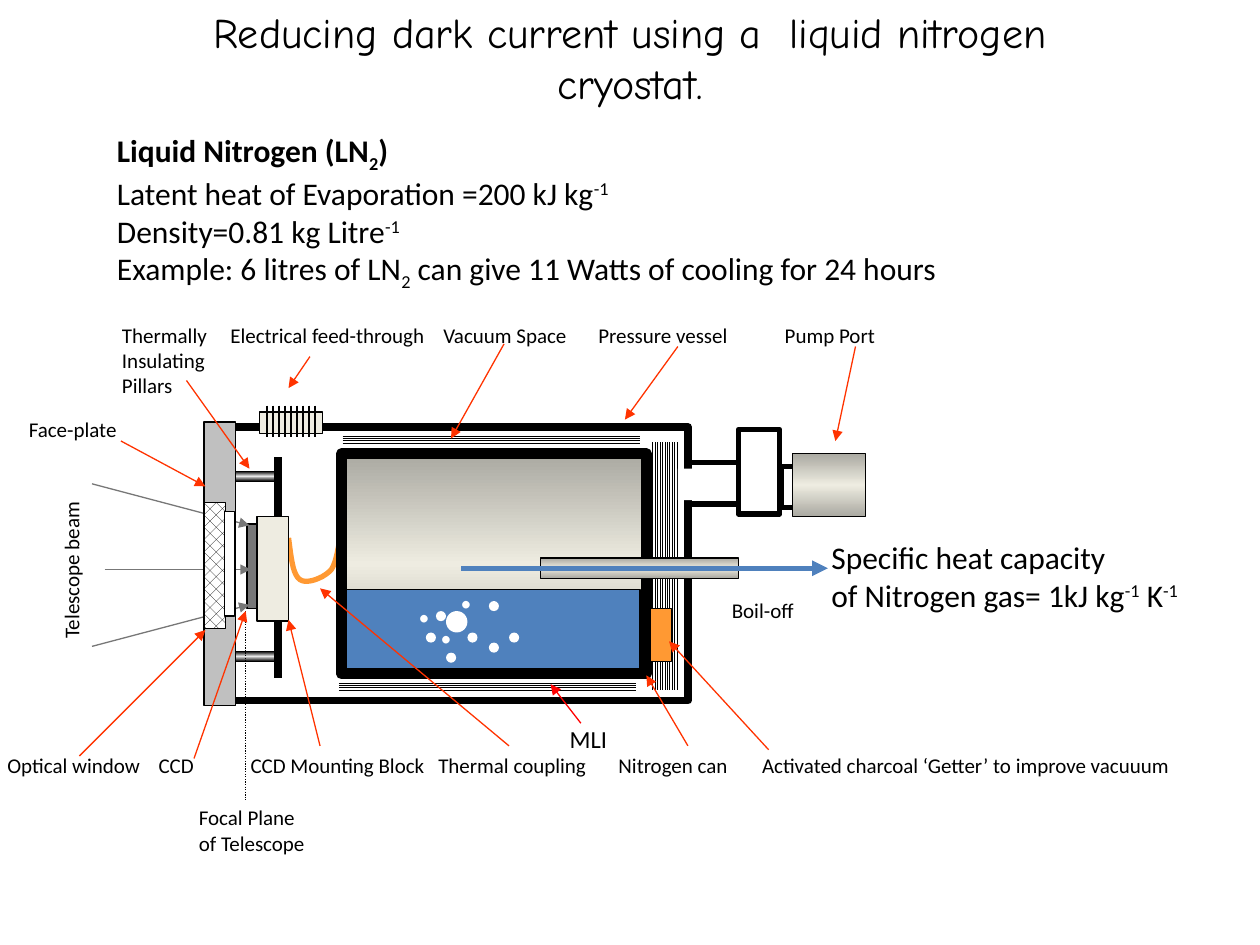
import copy

import pptx
import pptx.dml.color
import pptx.enum.dml
import pptx.enum.shapes
import pptx.enum.text
import pptx.oxml.ns
import pptx.oxml.xmlchemy
import pptx.util
from lxml import etree

rgb = pptx.dml.color.RGBColor.from_string
qn = pptx.oxml.ns.qn
Pt = pptx.util.Pt
RECTANGLE = pptx.enum.shapes.MSO_SHAPE.RECTANGLE
OVAL = pptx.enum.shapes.MSO_SHAPE.OVAL
PATTERN = pptx.enum.dml.MSO_PATTERN
BLACK, WHITE, GREY, CREAM = "000000", "FFFFFF", "777777", "EEECE1"
BLUE, ORANGE, POINTER = "4F81BD", "FF9933", "FF3300"
STEEL = ("AAA9A1", CREAM)
ROD = (BLACK, "E8E8E8")

deck = pptx.Presentation()
deck.slide_width = pptx.util.Inches(10)
deck.slide_height = pptx.util.Inches(7.5)
page = deck.slides.add_slide(deck.slide_layouts[6])

# The page is a grid of 100 columns and 75 rows; all places are in its cells.
column = deck.slide_width / 100
row = deck.slide_height / 75


def draw_block(left, top, width, height, fill, edge=0.75, kind=RECTANGLE, turn=0):
    """Fill: hex for solid, pair of hex for edge-middle-edge, pattern, or None."""
    block = page.shapes.add_shape(kind, int(left * column), int(top * row),
                                  int(width * column), int(height * row))
    block.shadow.inherit = False
    block.rotation = turn
    if fill is None:
        block.fill.background()
    elif isinstance(fill, str):
        block.fill.solid()
        block.fill.fore_color.rgb = rgb(fill)
    elif isinstance(fill, tuple):
        block.fill.gradient()
        block.fill.gradient_angle = 270
        first, second = block.fill.gradient_stops
        first.color.rgb, second.color.rgb = rgb(fill[0]), rgb(fill[1])
        first.position, second.position = 0, 0.5
        stops = block.element.spPr.find(".//" + qn("a:gsLst"))
        last = copy.deepcopy(stops[0])
        last.set("pos", "100000")
        stops.append(last)
    else:
        block.fill.patterned()
        block.fill.pattern = fill
        block.fill.fore_color.rgb = rgb(BLACK)
        block.fill.back_color.rgb = rgb(WHITE)
    if edge:
        block.line.color.rgb = rgb(BLACK)
        block.line.width = Pt(edge)
    else:
        block.line.fill.background()


def draw_line(x1, y1, x2, y2, color, width=0.75, arrow=True, dash=None):
    line = page.shapes.add_connector(
        pptx.enum.shapes.MSO_CONNECTOR.STRAIGHT,
        int(x1 * column), int(y1 * row), int(x2 * column), int(y2 * row))
    line.line.color.rgb = rgb(color)
    line.line.width = Pt(width)
    if dash:
        line.line.dash_style = dash
    properties = line._element.spPr
    if arrow:
        etree.SubElement(properties.find(qn("a:ln")), qn("a:tailEnd"), type="triangle")
    etree.SubElement(properties, qn("a:effectLst"))


# Insulation at the back, pillars, thermal coupling and mounting plate
draw_block(42.9, 43.8, 19.7, 2.3, PATTERN.LIGHT_VERTICAL, edge=0, turn=90)
for left, top in [(18.7, 37.4), (18.5, 51.7)]:
    draw_block(left, top, 3.3, 0.8, ROD)

coupling = [(22.9, 42.7), (23.1, 44.1), (23.2, 45.6), (23.8, 46), (24.3, 46.4),
            (25.7, 45.9), (26.3, 45.2), (26.8, 44.5), (27, 42.4), (27.1, 41.8)]
steps = 10
curve = []
for start in (0, 3, 6):
    controls = coupling[start:start + 4]
    for step in range(1, steps + 1):
        t = step / steps
        weights = ((1 - t) ** 3, 3 * t * (1 - t) ** 2, 3 * t ** 2 * (1 - t), t ** 3)
        curve.append(tuple(sum(w * point[axis] for w, point in zip(weights, controls)) * cell
                           for axis, cell in enumerate((column, row))))
outline = page.shapes.build_freeform(int(coupling[0][0] * column), int(coupling[0][1] * row))
outline.add_line_segments(curve, close=False)
strap = outline.convert_to_shape()
strap.shadow.inherit = False
strap.fill.background()
strap.line.color.rgb = rgb(ORANGE)
strap.line.width = Pt(3)

draw_line(22.1, 36.3, 22.1, 53.8, BLACK, 4.5, arrow=False)

# Cryostat body, from back to front
for left, top, width, height, fill, edge in [
    (27.1, 36, 24.2, 17.5, STEEL, 6),          # nitrogen can
    (17.1, 33.9, 37.5, 21.7, None, 4.5),       # pressure vessel
    (19.6, 41.6, 0.8, 6.7, GREY, 0.75),        # CCD
    (20.4, 41, 2.5, 8.3, CREAM, 0.75),         # mounting block
    (20.6, 32.7, 5, 1.7, CREAM, 0.75),         # feed-through
    (54.7, 36.7, 4.2, 3.3, WHITE, 3),          # pump port
    (53.8, 37.2, 1.7, 2.5, WHITE, 0),
    (58.6, 34.1, 3.3, 6.7, WHITE, 3),
    (62, 37, 4.2, 3.3, WHITE, 3),
    (62.9, 36, 5.8, 5, STEEL, 0.75),
    (42.9, 44.3, 15.7, 1.6, STEEL, 0.75),      # boil-off tube
    (27.5, 46.8, 23.3, 6.3, BLUE, 0.75),       # liquid nitrogen
]:
    draw_block(left, top, width, height, fill, edge)

pins = 9
for pin in range(pins):
    x = 21.2 + 3.8 * pin / (pins - 1)
    draw_line(x, 32.2, x, 34.7, BLACK, 1.5, arrow=False)

draw_line(36.6, 45.1, 65.7, 45.1, BLUE, 3)

for left, top, size in [
    (34.6, 48.5, 0.8), (33.8, 50.2, 0.8), (35.4, 51.8, 0.8), (37.1, 50.2, 0.8),
    (38.8, 47.7, 0.8), (38.8, 51, 0.8), (40.4, 50.2, 0.8), (35.4, 48.5, 1.7),
]:
    draw_block(left, top, size, size, WHITE, 0, OVAL)

# Telescope beam and focal plane
for ray in [(7.3, 38.4, 19.8, 41.7), (7.3, 51.3, 19.8, 48), (8.3, 45.2, 19.9, 45.2)]:
    draw_line(*ray, GREY)
draw_line(19.5, 48.5, 19.5, 63.5, BLACK, arrow=False,
          dash=pptx.enum.dml.MSO_LINE.ROUND_DOT)

for left, top, width, height, fill, edge in [
    (51.6, 48.3, 1.7, 4.2, ORANGE, 0.75),                # getter
    (16.2, 33.5, 2.5, 22.5, "C0C0C0", 0.75),             # face-plate
    (16.2, 39.9, 1.7, 10, PATTERN.PERCENT_30, 0.75),     # optical window
    (17.8, 40.6, 0.8, 8.3, WHITE, 0.75),
    (27.2, 34.4, 23.6, 0.8, PATTERN.LIGHT_HORIZONTAL, 0),
    (26.9, 54, 23.6, 0.8, PATTERN.LIGHT_HORIZONTAL, 0),
]:
    draw_block(left, top, width, height, fill, edge)

for pointer in [
    (24.6, 28.3, 22.9, 30.8), (53.8, 27.5, 49.6, 33.3), (67.9, 27.5, 66.3, 35),
    (6.3, 60, 16.3, 50), (25.4, 59.2, 22.9, 49.2), (40.4, 59.2, 25.4, 46.7),
    (54.6, 59.2, 51.3, 53.6), (61, 59.5, 53.1, 50.9), (9.6, 35, 16.3, 38.6),
    (15.4, 60.2, 19.5, 48.5), (14.8, 30.2, 19.8, 37.2), (40, 27.3, 35.8, 34.8),
]:
    draw_line(*pointer, POINTER)
draw_line(46.1, 57.4, 43.7, 54.3, "FF0000")

# Text: place, size, paragraphs of runs (a run is its text and its raise in percent)
top_labels = "Thermally\tElectrical feed-through\tVacuum Space\tPressure vessel\tPump Port"
bottom_labels = ("Optical window\tCCD\tCCD Mounting Block\tThermal coupling\tNitrogen can\t"
                 "Activated charcoal ‘Getter’ to improve vacuuum")
tab_columns = {top_labels: (8.6, 25.5, 37.8, 52.6),
               bottom_labels: (12, 19.3, 34.2, 48.5, 59.9)}
title = "Reducing dark current using a  liquid nitrogen cryostat."
heading = "Liquid Nitrogen (LN"
centred = (title, "MLI")
texts = [
    (12.5, 0, 75, 9.1, 24, [[(title, 0)]]),
    (8.7, 25.1, 62.4, 7, 12, [[(top_labels, 0)], [("Insulating", 0)], [("Pillars", 0)]]),
    (14.8, 63.4, 10.6, 5, 12, [[("Focal Plane", 0)], [("of Telescope", 0)]]),
    (-0.9, 43.6, 13.1, 3, 12, [[("Telescope beam", 0)]]),
    (-0.4, 59.2, 94.9, 3, 12, [[(bottom_labels, 0)]]),
    (57.1, 46.9, 7, 3, 12, [[("Boil-off", 0)]]),
    (1.3, 32.6, 9.1, 3, 12, [[("Face-plate", 0)]]),
    (8.3, 9.9, 67.7, 13, 18, [
        [(heading, 0), ("2", -25), (")", 0)],
        [("Latent heat of Evaporation =200 kJ kg", 0), ("-1", 30)],
        [("Density=0.81 kg Litre", 0), ("-1", 30)],
        [("Example: 6 litres of LN", 0), ("2", -25),
         (" can give 11 Watts of cooling for 24 hours", 0)]]),
    (65, 42.2, 30, 7, 18, [
        [("Specific heat capacity", 0)],
        [("of Nitrogen gas= 1kJ kg", 0), ("-1", 30), (" K", 0), ("-1", 30)]]),
    (44.2, 57, 5, 3.3, 14, [[("MLI", 0)]]),
]
for left, top in [(32.1, 43.9), (33.8, 45.6), (35.4, 42.8)]:
    texts.append((left, top, 3.3, 7, 36, [[(".", 0)]]))

for left, top, width, height, size, paragraphs in texts:
    box = page.shapes.add_textbox(int(left * column), int(top * row),
                                  int(width * column), int(height * row))
    first_words = paragraphs[0][0][0]
    frame = box.text_frame
    frame.word_wrap = first_words != "."
    if first_words == title:
        frame.vertical_anchor = pptx.enum.text.MSO_ANCHOR.MIDDLE
    else:
        frame.auto_size = pptx.enum.text.MSO_AUTO_SIZE.SHAPE_TO_FIT_TEXT
    if first_words == "Telescope beam":
        box.rotation = 270
    for number, runs in enumerate(paragraphs):
        para = frame.add_paragraph() if number else frame.paragraphs[0]
        if first_words in centred:
            para.alignment = pptx.enum.text.PP_ALIGN.CENTER
        if runs[0][0] in tab_columns:
            tabs = etree.SubElement(para._p.get_or_add_pPr(), qn("a:tabLst"))
            for stop in tab_columns[runs[0][0]]:
                etree.SubElement(tabs, qn("a:tab"), pos=str(int(stop * column)), algn="l")
        for words, raised in runs:
            span = para.add_run()
            span.text = words
            span.font.size = Pt(size)
            span.font.name = "Comic Neue" if words == title else "Calibri"
            span.font.bold = runs[0][0] == heading
            span.font.color.rgb = rgb(WHITE if words == "." else BLACK)
            if raised:
                span.font._element.set("baseline", str(raised * 1000))

deck.save("out.pptx")
